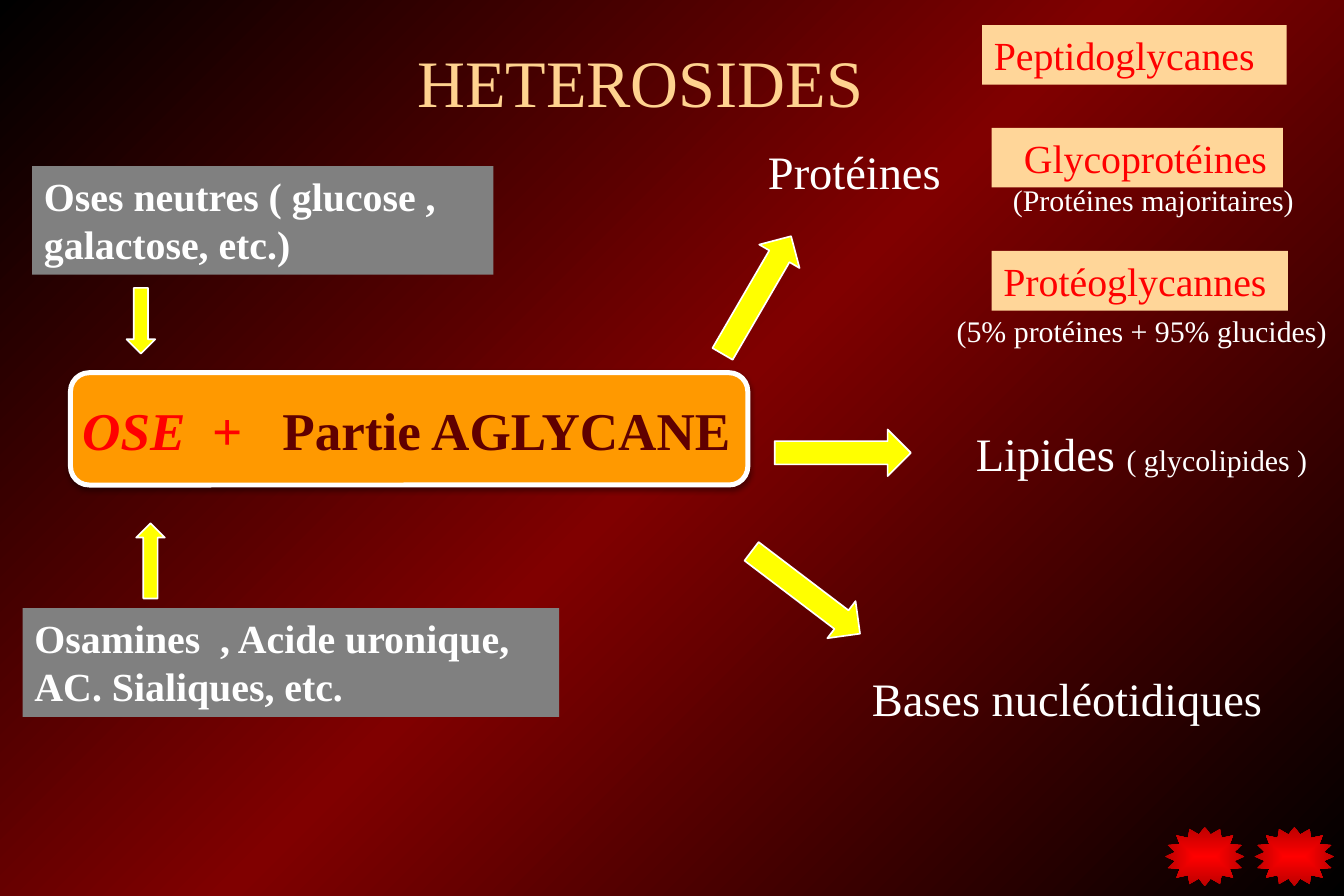
from lxml import etree
from pptx import Presentation
from pptx.dml.color import RGBColor
from pptx.enum.shapes import MSO_SHAPE
from pptx.enum.text import MSO_ANCHOR, MSO_AUTO_SIZE, PP_ALIGN
from pptx.oxml.ns import qn
from pptx.util import Inches, Pt

RECT, ROUND, STAR = MSO_SHAPE.RECTANGLE, MSO_SHAPE.ROUNDED_RECTANGLE, MSO_SHAPE.STAR_16_POINT
UP, DOWN = MSO_SHAPE.UP_ARROW, MSO_SHAPE.DOWN_ARROW
TOP, GROW = MSO_ANCHOR.TOP, MSO_AUTO_SIZE.SHAPE_TO_FIT_TEXT
LEFT, CENTER = PP_ALIGN.LEFT, PP_ALIGN.CENTER

WHITE = RGBColor(0xFF, 0xFF, 0xFF)
RED = RGBColor(0xFF, 0x00, 0x00)
MAROON = RGBColor(0x60, 0x00, 0x00)
YELLOW = RGBColor(0xFF, 0xFF, 0x00)
ORANGE = RGBColor(0xFF, 0x99, 0x00)
GRAY = RGBColor(0x80, 0x80, 0x80)
PEACH = RGBColor(0xFF, 0xD6, 0x99)
GOLD = RGBColor(0xFF, 0xD2, 0x8F)
BLACK = RGBColor(0x00, 0x00, 0x00)
DARK = RGBColor(0x80, 0x00, 0x00)
DEEP = RGBColor(0xBC, 0x00, 0x00)

BACK = [(0, BLACK), (50, DARK), (100, BLACK)]
GLOW = [(0, RED), (100, DEEP)]

BIG = dict(size=Pt(28), color=WHITE)
NOTE = dict(size=Pt(18), color=WHITE)
SUGAR = dict(size=Pt(24), color=WHITE, bold=True)
CLASS = dict(size=Pt(24), color=RED)
CORE = dict(size=Pt(32), color=RED, bold=True)

TITLE = ((2.33, 0.29, 6.06, 0.77), [("HETEROSIDES", dict(size=Pt(40), color=GOLD))])
STARS = [(10.5, 6.92, 0.67, 0.5), (9.75, 6.92, 0.67, 0.5)]
FRAME = (0.59, 3.12, 5.67, 0.94)

# place, runs
LABELS = [
    ((0.59, 3.28, 5.83, 0.64), [("OSE  ", dict(CORE, italic=True)), ("+   ", CORE),
                                ("Partie AGLYCANE", dict(CORE, color=MAROON))]),
    ((6.33, 1.15, 3.31, 0.57), [("Protéines", BIG)]),
    ((8.07, 3.51, 3.18, 0.57), [("Lipides ", BIG), ("( glycolipides )", NOTE)]),
    ((7.2, 5.56, 3.54, 0.57), [("Bases nucléotidiques", BIG)]),
    ((7.91, 2.57, 3.5, 0.4), [("(5% protéines + 95% glucides)", NOTE)]),
    ((8.38, 1.47, 3.39, 0.4), [("(Protéines majoritaires)", NOTE)]),
]
# place, fill, left margin, text, format
BOXES = [
    ((0.27, 1.39, 3.86, 0.91), GRAY, 0.1, "Oses neutres ( glucose , galactose, etc.)", SUGAR),
    ((0.19, 5.09, 4.49, 0.91), GRAY, 0.1, "Osamines  , Acide uronique, AC. Sialiques, etc.", SUGAR),
    ((8.22, 0.21, 2.55, 0.5), PEACH, 0.1, "Peptidoglycanes", CLASS),
    ((8.3, 1.07, 2.44, 0.5), PEACH, 0.27, "Glycoprotéines", CLASS),
    ((8.3, 2.1, 2.48, 0.5), PEACH, 0.1, "Protéoglycannes", CLASS),
]
# kind, place, turn
ARROWS = [
    (DOWN, (1.06, 2.41, 0.24, 0.55), 0),
    (UP, (1.14, 4.38, 0.24, 0.63), 0),
    (UP, (6.14, 1.9, 0.39, 1.14), 30.2),
    (UP, (6.86, 3.22, 0.39, 1.14), 90),
    (UP, (6.55, 4.39, 0.39, 1.14), 127.2),
]


def add(parent, tag, **attrs):
    return etree.SubElement(parent, qn(tag), {k: str(v) for k, v in attrs.items()})


def blend(fill, owner, stops):
    """Give the fill a gradient with these stops; return its XML node."""
    fill.gradient()
    node = owner.xpath(".//a:gradFill")[0]
    group = node.find(qn("a:gsLst"))
    for old in list(group):
        group.remove(old)
    for pos, color in stops:
        add(add(group, "a:gs", pos=pos * 1000), "a:srgbClr", val=color)
    return node


def draw(kind, place, fill=None, line=None):
    shape = slide.shapes.add_shape(kind, *map(Inches, place))
    shape.shadow.inherit = False
    if fill is not None:
        shape.fill.solid()
        shape.fill.fore_color.rgb = fill
    if line:
        shape.line.color.rgb = WHITE
        shape.line.width = Pt(line)
    else:
        shape.line.fill.background()
    return shape


def write(shape, runs, align=LEFT, margin=0.1):
    frame = shape.text_frame
    look = dict(word_wrap=True, auto_size=GROW, vertical_anchor=TOP, margin_left=Inches(margin))
    for name, value in look.items():
        setattr(frame, name, value)
    para = frame.paragraphs[0]
    para.alignment = align
    for text, style in runs:
        run = para.add_run()
        run.text = text
        run.font.name = "Times New Roman"
        for name, value in style.items():
            if name == "color":
                run.font.color.rgb = value
            else:
                setattr(run.font, name, value)


deck = Presentation()
deck.slide_width, deck.slide_height = Inches(11.25), Inches(7.5)
slide = deck.slides.add_slide(deck.slide_layouts[5])

back = slide.background.fill
blend(back, slide.element, BACK)
back.gradient_angle = 315

title = slide.shapes.title
title.left, title.top, title.width, title.height = map(Inches, TITLE[0])
write(title, TITLE[1], CENTER)

for place in STARS:
    star = draw(STAR, place)
    node = blend(star.fill, star.element, GLOW)
    node.remove(node.find(qn("a:lin")))
    shade = add(node, "a:path", path="shape")
    add(shade, "a:fillToRect", l=50000, t=50000, r=50000, b=50000)

core = draw(ROUND, FRAME, ORANGE, 3)
effect = core.element.spPr.find(qn("a:effectLst"))
shadow = add(effect, "a:outerShdw", blurRad=Pt(3.1), dist=Pt(1.6), dir=5400000, rotWithShape=0)
add(add(shadow, "a:srgbClr", val=BLACK), "a:alpha", val=38000)

for place, fill, margin, text, style in BOXES:
    write(draw(RECT, place, fill), [(text, style)], margin=margin)

for kind, place, turn in ARROWS:
    draw(kind, place, YELLOW, 1).rotation = turn

for place, runs in LABELS:
    write(slide.shapes.add_textbox(*map(Inches, place)), runs)

deck.save("out.pptx")
